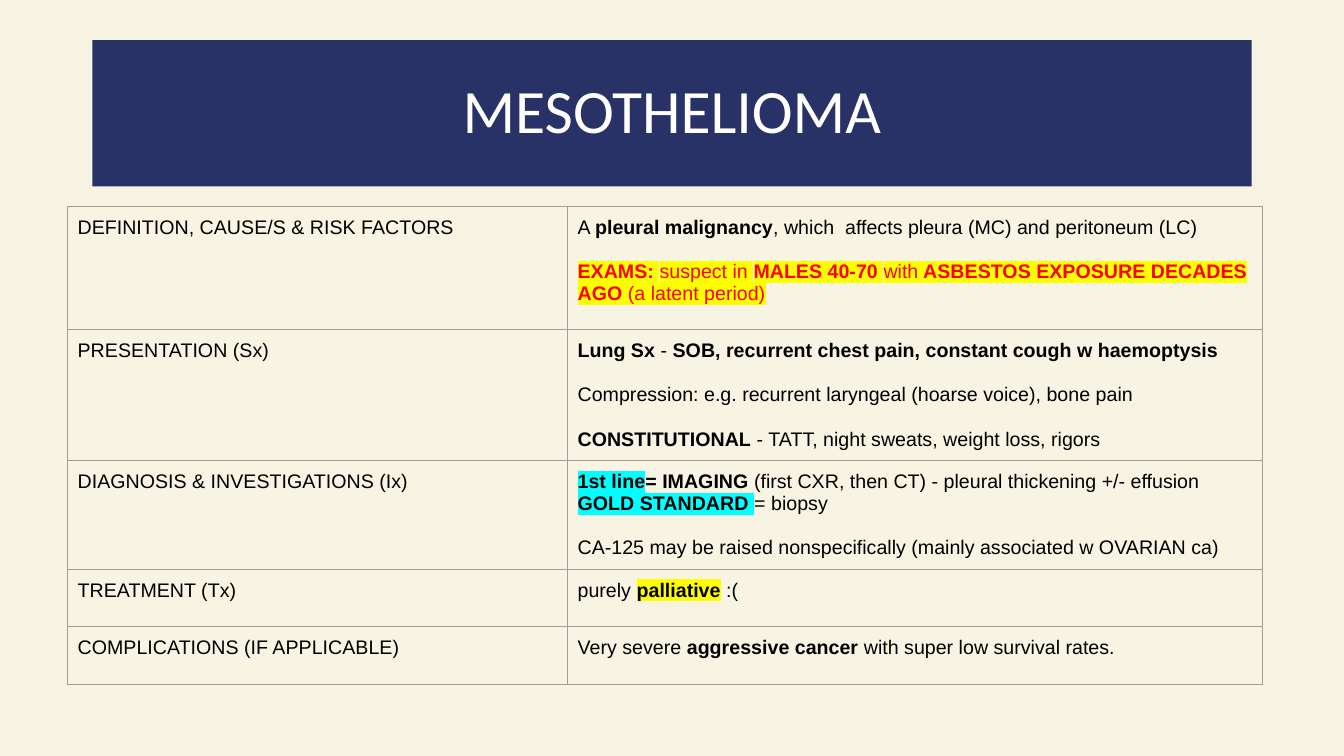
import dataclasses
import typing

import lxml.etree
import pptx
import pptx.dml.color
import pptx.enum.shapes
import pptx.enum.text
import pptx.oxml.ns
import pptx.util

HUES = {
    "page": "F8F4E4", "navy": "293267", "white": "FFFFFF", "black": "000000",
    "red": "FF0000", "yellow": "FFFF00", "cyan": "00FFFF", "rule": "9E9E9E",
}
# The grid has 100 columns and 100 rows
WIDE, HIGH = pptx.util.Inches(13.333), pptx.util.Inches(7.5)
PAD = pptx.util.Inches(0.1)
SIZE = 14
GAP = 16


@dataclasses.dataclass
class Run:
    text: str
    bold: bool = False
    mark: typing.Optional[str] = None
    hue: str = "black"
    size: int = SIZE
    font: str = "Arial"


@dataclasses.dataclass
class Para:
    runs: list[Run]
    gap: int = 0


@dataclasses.dataclass
class Topic:
    name: str
    rows: float
    body: list[Para]
    tail: int = 0


def col(n: float) -> int:
    return round(WIDE * n / 100)


def row(n: float) -> int:
    return round(HIGH * n / 100)


def rgb(hue: str) -> pptx.dml.color.RGBColor:
    return pptx.dml.color.RGBColor.from_string(HUES[hue])


def tag(name: str) -> str:
    return pptx.oxml.ns.qn("a:" + name)


def add_run(para: typing.Any, run: Run) -> None:
    item = para.add_run()
    item.text = run.text
    font = item.font
    font.size = pptx.util.Pt(run.size)
    font.bold = run.bold
    font.color.rgb = rgb(run.hue)
    if run.mark:
        mark = lxml.etree.SubElement(font._element, tag("highlight"))
        lxml.etree.SubElement(mark, tag("srgbClr"), val=HUES[run.mark])
    font.name = run.font


def write(frame: typing.Any, paras: list[Para]) -> None:
    for i, para in enumerate(paras):
        line = frame.add_paragraph() if i else frame.paragraphs[0]
        line.space_before = pptx.util.Pt(para.gap)
        for run in para.runs:
            add_run(line, run)


def add_edge(cell: typing.Any) -> None:
    props = cell._tc.get_or_add_tcPr()
    for i, side in enumerate(("lnL", "lnR", "lnT", "lnB")):
        edge = lxml.etree.Element(tag(side), w=str(pptx.util.Pt(0.75)))
        fill = lxml.etree.SubElement(edge, tag("solidFill"))
        lxml.etree.SubElement(fill, tag("srgbClr"), val=HUES["rule"])
        props.insert(i, edge)


def fill_cell(cell: typing.Any, paras: list[Para]) -> None:
    cell.fill.background()
    cell.margin_left = cell.margin_right = PAD
    cell.margin_top = cell.margin_bottom = PAD
    write(cell.text_frame, paras)
    add_edge(cell)


def add_title(slide: typing.Any, text: str) -> None:
    box = slide.shapes.add_shape(
        pptx.enum.shapes.MSO_SHAPE.RECTANGLE,
        col(6.88), row(5.33), col(86.25), row(19.33))
    box.shadow.inherit = False
    box.fill.solid()
    box.fill.fore_color.rgb = rgb("navy")
    box.line.fill.background()
    frame = box.text_frame
    frame.word_wrap = True
    frame.vertical_anchor = pptx.enum.text.MSO_ANCHOR.MIDDLE
    write(frame, [Para([Run(text, hue="white", size=44, font="Calibri")])])
    frame.paragraphs[0].alignment = pptx.enum.text.PP_ALIGN.CENTER
    frame.paragraphs[0].line_spacing = 0.9


def add_grid(slide: typing.Any, topics: list[Topic]) -> None:
    cols = (37.2, 51.69)
    deep = sum(topic.rows for topic in topics)
    grid = slide.shapes.add_table(
        len(topics), len(cols), col(5.03), row(27.33),
        col(sum(cols)), row(deep)).table
    grid.first_row = grid.horz_banding = False
    for i, wide in enumerate(cols):
        grid.columns[i].width = col(wide)
    for i, topic in enumerate(topics):
        grid.rows[i].height = row(topic.rows)
        fill_cell(grid.cell(i, 0), [Para([Run(topic.name)])])
        fill_cell(grid.cell(i, 1), topic.body)


def exam(text: str, bold: bool = False) -> Run:
    return Run(text, bold, "yellow", "red")


TOPICS = [
    Topic("DEFINITION, CAUSE/S & RISK FACTORS", 16.27, [
        Para([Run("A "), Run("pleural malignancy", True),
              Run(", which  affects pleura (MC) and peritoneum (LC)")]),
        Para([exam("EXAMS: ", True), exam("suspect in "),
              exam("MALES 40-70 ", True), exam("with"),
              exam(" ASBESTOS EXPOSURE DECADES AGO ", True),
              exam("(a latent period)")], GAP),
    ]),
    Topic("PRESENTATION (Sx)", 17.2, [
        Para([Run("Lung Sx", True), Run(" -"),
              Run(" SOB, recurrent chest pain, constant cough w haemoptysis",
                  True)]),
        Para([Run("Compression: e.g. recurrent laryngeal (hoarse voice), "
                  "bone pain")], GAP),
        Para([Run("CONSTITUTIONAL", True),
              Run(" - TATT, night sweats, weight loss, rigors")], GAP),
    ]),
    Topic("DIAGNOSIS & INVESTIGATIONS (Ix)", 14.27, [
        Para([Run("1st line", True, "cyan"), Run("= IMAGING", True),
              Run(" (first CXR, then CT) - pleural thickening +/- effusion")]),
        Para([Run("GOLD STANDARD", True, "cyan"), Run(" ", mark="cyan"),
              Run("= biopsy")]),
        Para([Run("CA-125 may be raised nonspecifically "
                  "(mainly associated w OVARIAN ca)")], GAP),
    ]),
    Topic("TREATMENT (Tx)", 7.6, [
        Para([Run("purely "), Run("palliative", True, "yellow"), Run(" :(")]),
    ]),
    Topic("COMPLICATIONS (IF APPLICABLE)", 7.6, [
        Para([Run("Very severe"), Run(" aggressive cancer ", True),
              Run("with super low survival rates.")]),
    ]),
]


def main() -> None:
    deck = pptx.Presentation()
    deck.slide_width, deck.slide_height = WIDE, HIGH
    slide = deck.slides.add_slide(deck.slide_layouts[6])
    # Page colour
    slide.background.fill.solid()
    slide.background.fill.fore_color.rgb = rgb("page")
    # Title band and table of topics
    add_title(slide, "MESOTHELIOMA")
    add_grid(slide, TOPICS)
    deck.save("out.pptx")


if __name__ == "__main__":
    main()
